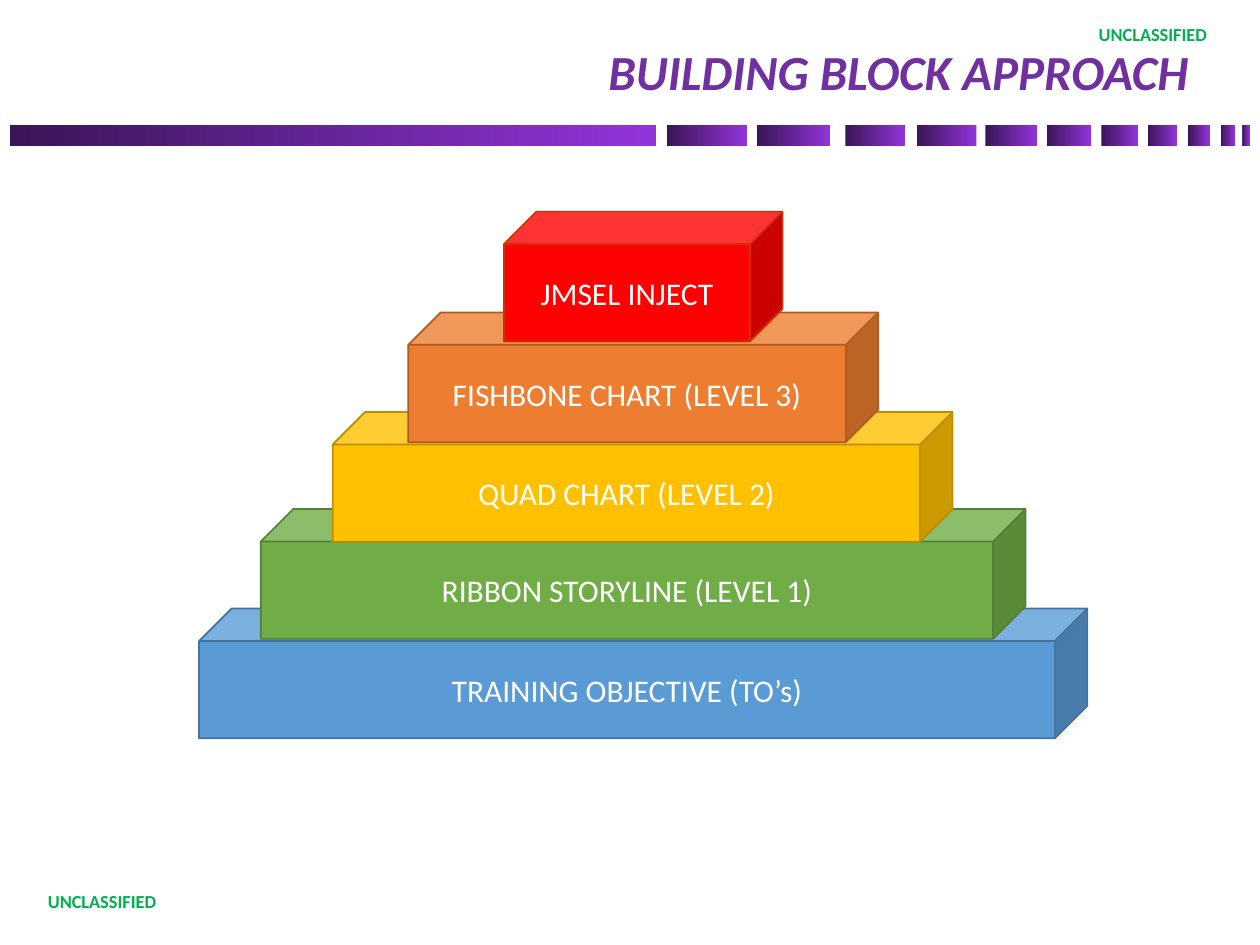
from dataclasses import dataclass

from pptx import Presentation
from pptx.dml.color import RGBColor
from pptx.enum import shapes, text
from pptx.util import Inches, Pt


@dataclass(frozen=True)
class Theme:
    font: str = "Calibri"
    title: str = "7030A0"
    marking: str = "00B050"
    block_text: str = "FFFFFF"
    bar_start: str = "3B1557"
    bar_end: str = "9234DB"
    title_size: float = 28
    block_size: float = 18
    marking_size: float = 10.5


THEME = Theme()
TITLE = "BUILDING BLOCK APPROACH"
MARKING = "UNCLASSIFIED"
MARKING_PLACES = [(8.33, 0.07), (-0.01, 6.95)]

# label, left, top, width, fill, outline; from the base upwards
BLOCKS = [
    ("TRAINING OBJECTIVE (TO’s)", 1.58, 4.83, 7.05, "5B9BD5", "43739E"),
    ("RIBBON STORYLINE (LEVEL 1)", 2.07, 4.04, 6.07, "70AD47", "538035"),
    ("QUAD CHART (LEVEL 2)", 2.64, 3.27, 4.92, "FFC000", "BD8E00"),
    ("FISHBONE CHART (LEVEL 3)", 3.24, 2.48, 3.73, "ED7D31", "AF5C24"),
    ("JMSEL INJECT", 4.00, 1.68, 2.21, "FF0000", "CC3300"),
]
BLOCK_HEIGHT = 1.03

# left, width of each dash in the band under the title
BAND = [
    (0.08, 5.13), (5.29, 0.64), (6.01, 0.58), (6.71, 0.47),
    (7.28, 0.47), (7.82, 0.41), (8.31, 0.35), (8.74, 0.29),
    (9.11, 0.23), (9.43, 0.17), (9.69, 0.11), (9.86, 0.06),
]
BAND_TOP, BAND_HEIGHT = 0.99, 0.17


def rgb(value):
    return RGBColor.from_string(value)


def write(shape, words, size, color, align=text.PP_ALIGN.CENTER,
          bold=False, italic=False):
    frame = shape.text_frame
    frame.word_wrap = True
    frame.auto_size = text.MSO_AUTO_SIZE.NONE
    frame.vertical_anchor = text.MSO_ANCHOR.MIDDLE
    para = frame.paragraphs[0]
    para.alignment = align
    span = para.add_run()
    span.text = words
    font = span.font
    font.name, font.size = THEME.font, Pt(size)
    font.bold, font.italic = bold, italic
    font.color.rgb = rgb(color)


def add_preset(page, kind, left, top, width, height):
    shape = page.shapes.add_shape(
        kind, Inches(left), Inches(top), Inches(width), Inches(height))
    shape.shadow.inherit = False
    return shape


def add_band(page):
    for left, width in BAND:
        dash = add_preset(page, shapes.MSO_SHAPE.RECTANGLE,
                          left, BAND_TOP, width, BAND_HEIGHT)
        dash.fill.gradient()
        dash.fill.gradient_angle = 0
        colors = (THEME.bar_start, THEME.bar_end)
        for stop, color in zip(dash.fill.gradient_stops, colors):
            stop.color.rgb = rgb(color)
        dash.line.fill.background()


def add_markings(page):
    for left, top in MARKING_PLACES:
        box = page.shapes.add_textbox(
            Inches(left), Inches(top), Inches(1.64), Inches(0.4))
        write(box, MARKING, THEME.marking_size, THEME.marking, bold=True)


def add_blocks(page):
    for label, left, top, width, fill, outline in BLOCKS:
        block = add_preset(page, shapes.MSO_SHAPE.CUBE,
                           left, top, width, BLOCK_HEIGHT)
        block.fill.solid()
        block.fill.fore_color.rgb = rgb(fill)
        block.line.color.rgb = rgb(outline)
        block.line.width = Pt(1)
        write(block, label, THEME.block_size, THEME.block_text)


def add_title(page):
    title = page.shapes.title
    title.left, title.top = Inches(0.72), Inches(0.11)
    title.width, title.height = Inches(8.78), Inches(0.9)
    frame = title.text_frame
    frame.margin_left = frame.margin_right = Inches(0.07)
    frame.margin_top = frame.margin_bottom = Inches(0.04)
    write(title, TITLE, THEME.title_size, THEME.title,
          text.PP_ALIGN.RIGHT, bold=True, italic=True)


def main():
    deck = Presentation()
    deck.slide_width, deck.slide_height = Inches(10), Inches(7.5)
    page = deck.slides.add_slide(deck.slide_layouts.get_by_name("Title Only"))
    add_band(page)
    add_markings(page)
    add_blocks(page)
    add_title(page)
    deck.save("out.pptx")


if __name__ == "__main__":
    main()
